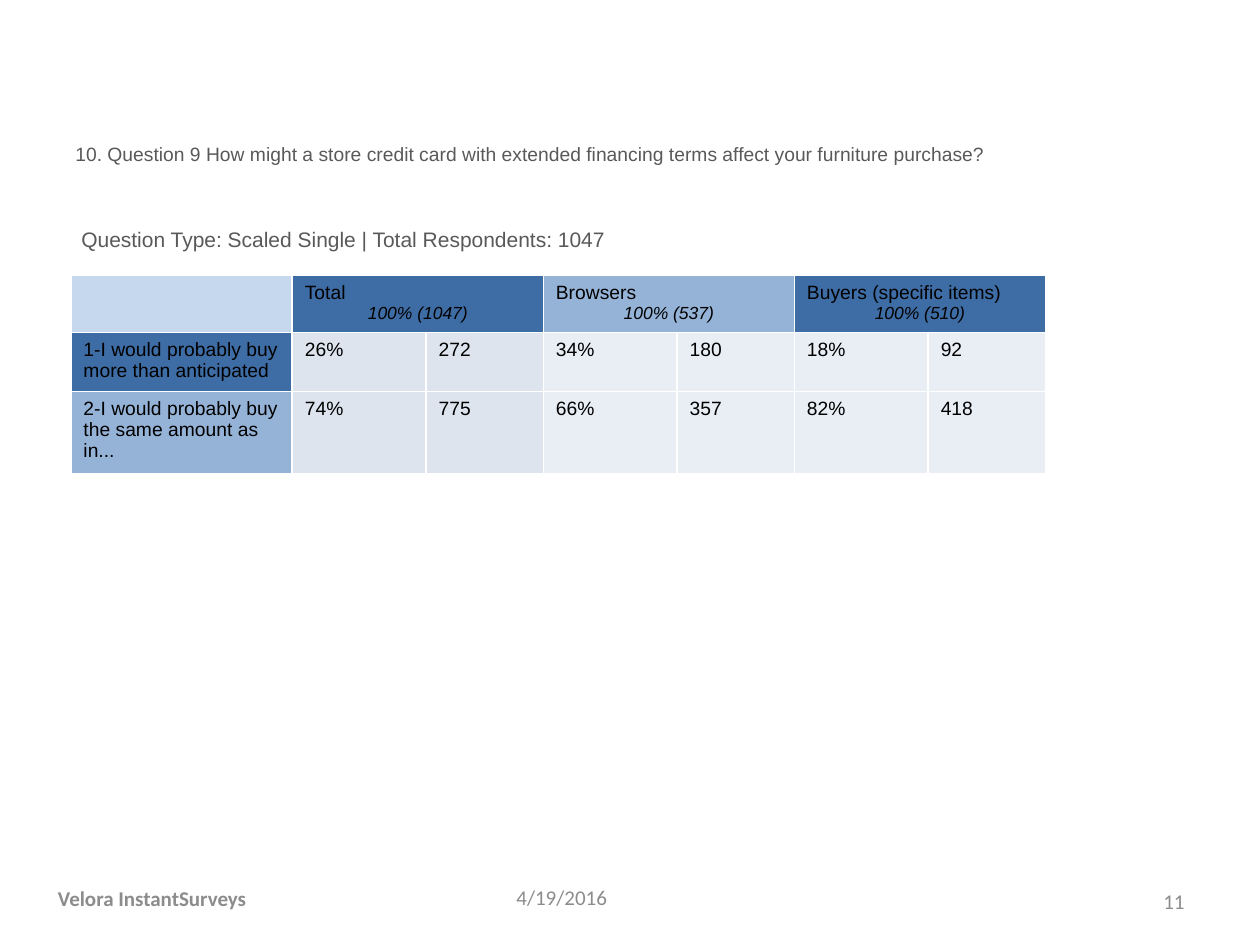
"""Build the survey result slide with its question, results table and footer."""
from dataclasses import dataclass

import pptx
import pptx.dml.color
import pptx.enum.text
import pptx.oxml
import pptx.oxml.ns
import pptx.util

Pt = pptx.util.Pt
ALIGN = pptx.enum.text.PP_ALIGN
ANCHOR = pptx.enum.text.MSO_ANCHOR
DARK, MID, PALE = "3E6CA4", "95B3D7", "C5D8ED"
TOTAL_FILL, GROUP_FILL = "DEE4EE", "E9EDF4"
GREY, FOOTER_GREY = "595959", "8C8C8C"


@dataclass
class Label:
    text: str
    left: float
    top: float
    width: float
    height: float
    size: float = 12
    font: str = "Calibri"
    color: str = FOOTER_GREY
    bold: bool = False
    align: ALIGN = ALIGN.LEFT
    anchor: ANCHOR = ANCHOR.MIDDLE
    inset: float = 7.2


@dataclass
class Group:
    name: str
    base: int
    header_fill: str
    body_fill: str
    results: list[tuple[str, str]]


LABELS = [
    Label("10. Question 9 How might a store credit card with extended financing terms "
          "affect your furniture purchase?", 36, 78, 648, 42, 11, "Arial", GREY,
          anchor=ANCHOR.TOP),
    Label("Question Type: Scaled Single | Total Respondents: 1047",
          36, 126, 648, 30, 12, "Arial", GREY, anchor=ANCHOR.TOP, inset=10.5),
    Label("4/19/2016", 288, 498, 168, 29),
    Label("Velora InstantSurveys", 12, 498, 150, 30, bold=True, align=ALIGN.CENTER),
    Label("11", 516, 500.5, 168, 29, align=ALIGN.RIGHT),
]
GROUPS = [
    Group("Total", 1047, DARK, TOTAL_FILL, [("26%", "272"), ("74%", "775")]),
    Group("Browsers", 537, MID, GROUP_FILL, [("34%", "180"), ("66%", "357")]),
    Group("Buyers (specific items)", 510, DARK, GROUP_FILL, [("18%", "92"), ("82%", "418")]),
]
ANSWERS = [
    ("1-I would probably buy more than anticipated", DARK),
    ("2-I would probably buy the same amount as in...", MID),
]
COL_WIDTHS = [126.5] + [76.5, 67] * len(GROUPS) + [20]
ROW_HEIGHTS = [30, 31.5, 43.5]


def rgb(color: str) -> pptx.dml.color.RGBColor:
    return pptx.dml.color.RGBColor.from_string(color)


def format_runs(p, size: float, font: str, color: str, bold=False, italic=False) -> None:
    for r in p.runs:
        r.font.size, r.font.name = Pt(size), font
        r.font.bold, r.font.italic = bold, italic
        r.font.color.rgb = rgb(color)


def add_label(slide, label: Label) -> None:
    sp = slide.shapes.add_textbox(Pt(label.left), Pt(label.top), Pt(label.width), Pt(label.height))
    tf = sp.text_frame
    tf.word_wrap = True
    tf.vertical_anchor = label.anchor
    tf.margin_left = Pt(label.inset)
    tf.text = label.text
    p = tf.paragraphs[0]
    p.alignment = label.align
    format_runs(p, label.size, label.font, label.color, label.bold)


def style_cell(cell, fill: str | None) -> None:
    tc_pr = cell._tc.get_or_add_tcPr()
    for side in ("lnL", "lnR", "lnT", "lnB"):
        tc_pr.append(pptx.oxml.parse_xml(
            f'<a:{side} {pptx.oxml.ns.nsdecls("a")} w="{Pt(1)}">'
            f'<a:solidFill><a:srgbClr val="FFFFFF"/></a:solidFill></a:{side}>'))
    if fill:
        cell.fill.solid()
        cell.fill.fore_color.rgb = rgb(fill)
    else:
        cell.fill.background()


def fill_cell(cell, text: str, fill: str) -> None:
    style_cell(cell, fill)
    cell.text_frame.text = text
    format_runs(cell.text_frame.paragraphs[0], 11, "Arial", "000000")


def add_results(slide, left: float, top: float) -> None:
    table = slide.shapes.add_table(
        len(ROW_HEIGHTS), len(COL_WIDTHS), Pt(left), Pt(top),
        Pt(sum(COL_WIDTHS)), Pt(sum(ROW_HEIGHTS))).table
    for column, width in zip(table.columns, COL_WIDTHS):
        column.width = Pt(width)
    for row, height in zip(table.rows, ROW_HEIGHTS):
        row.height = Pt(height)
        style_cell(row.cells[len(COL_WIDTHS) - 1], None)
    style_cell(table.cell(0, 0), PALE)
    for i, (answer, fill) in enumerate(ANSWERS, 1):
        fill_cell(table.cell(i, 0), answer, fill)
    for i, group in enumerate(GROUPS):
        col = 1 + 2 * i
        header = table.cell(0, col)
        header.merge(table.cell(0, col + 1))
        style_cell(table.cell(0, col + 1), group.header_fill)
        fill_cell(header, group.name, group.header_fill)
        p = header.text_frame.add_paragraph()
        p.text = f"100% ({group.base})"
        p.alignment = ALIGN.CENTER
        format_runs(p, 10, "Arial", "000000", italic=True)
        for row, values in enumerate(group.results, 1):
            for offset, value in enumerate(values):
                fill_cell(table.cell(row, col + offset), value, group.body_fill)


def main() -> None:
    prs = pptx.Presentation()
    prs.slide_width, prs.slide_height = Pt(720), Pt(540)
    slide = prs.slides.add_slide(prs.slide_layouts[6])
    for label in LABELS:
        add_label(slide, label)
    add_results(slide, 40.5, 157.5)
    prs.save("out.pptx")


if __name__ == "__main__":
    main()
